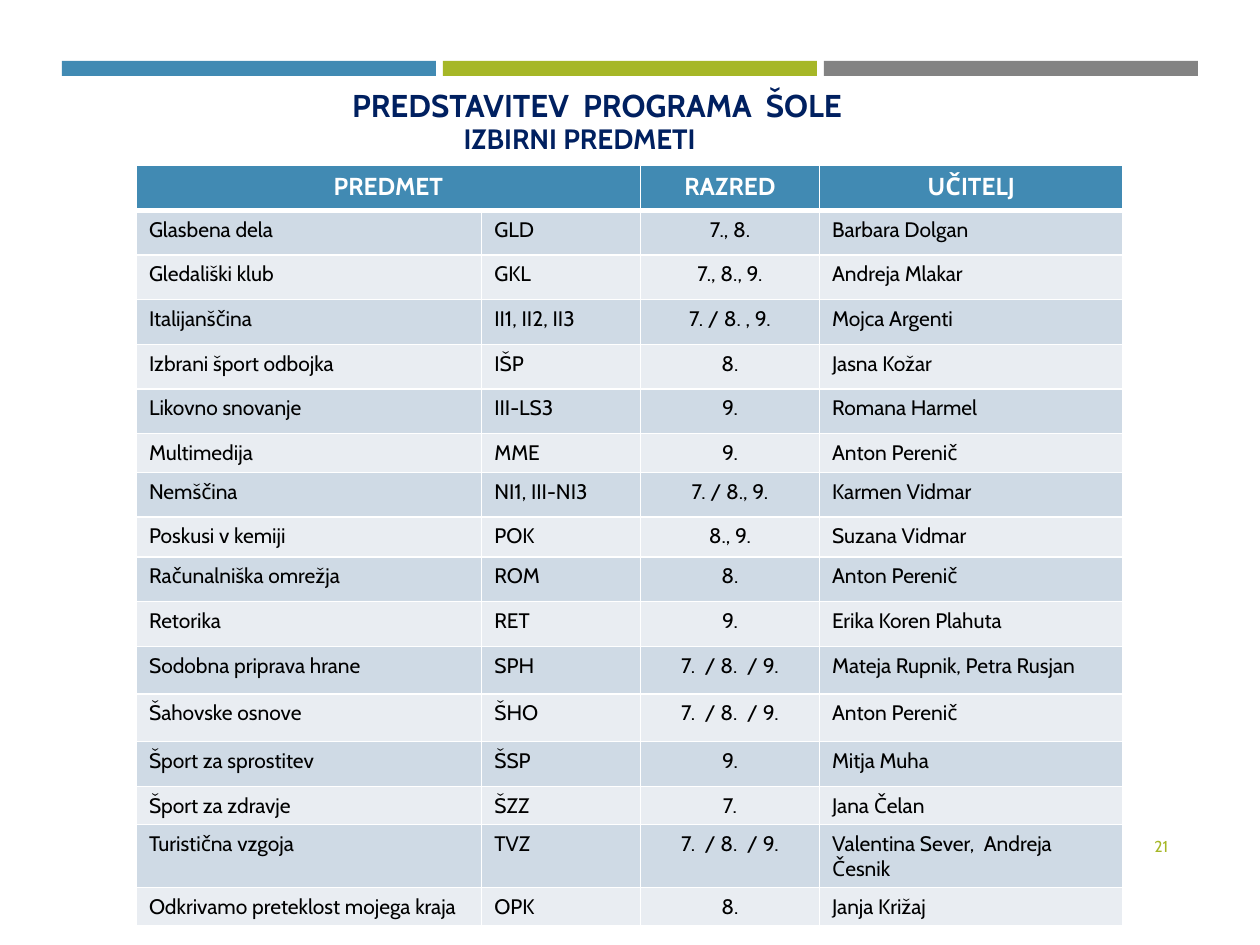
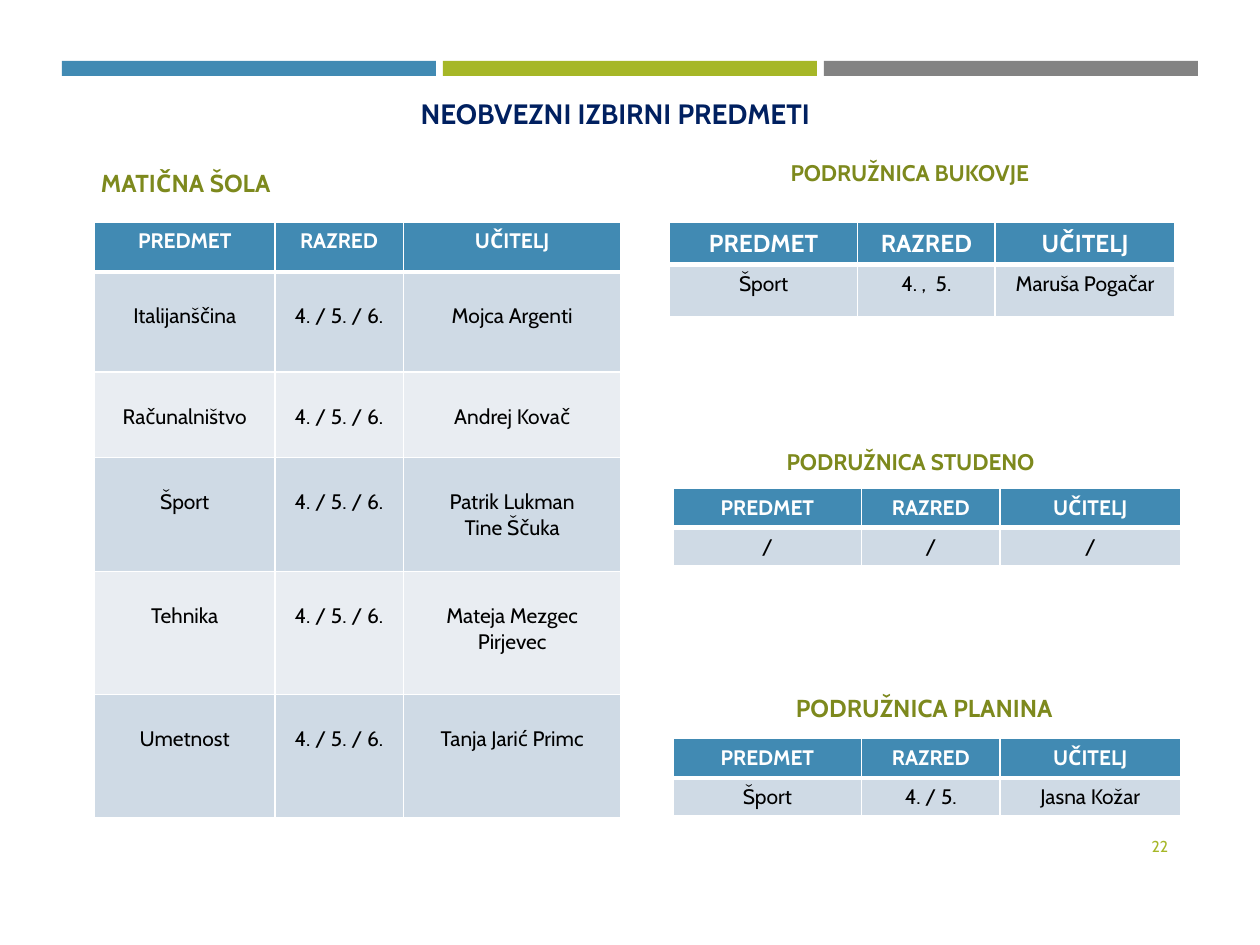
from lxml.etree import SubElement
from pptx import Presentation
from pptx.dml.color import RGBColor
from pptx.enum.shapes import MSO_SHAPE
from pptx.enum.text import MSO_ANCHOR, MSO_AUTO_SIZE, PP_ALIGN
from pptx.oxml.ns import qn
from pptx.util import Cm, Pt

COLORS = {
    "blue": "418AB3",
    "green": "A6B727",
    "gray": "838383",
    "navy": "002060",
    "olive": "7D891D",
    "odd_row": "CFDAE5",
    "even_row": "E9EDF2",
    "white": "FFFFFF",
    "black": "000000",
}
FONT = "Cabin"
LEFT, CENTER, RIGHT = PP_ALIGN.LEFT, PP_ALIGN.CENTER, PP_ALIGN.RIGHT

ELECTIVES = [
    ("Glasbena dela", "GLD", "7., 8.", "Barbara Dolgan"),
    ("Gledališki klub", "GKL", "7., 8., 9.", "Andreja Mlakar"),
    ("Italijanščina", "II1, II2, II3", "7. / 8. , 9.", "Mojca Argenti"),
    ("Izbrani šport odbojka", "IŠP", "8.", "Jasna Kožar"),
    ("Likovno snovanje", "III-LS3", "9.", "Romana Harmel"),
    ("Multimedija", "MME", "9.", "Anton Perenič"),
    ("Nemščina", "NI1, III-NI3", "7. / 8., 9.", "Karmen Vidmar"),
    ("Poskusi v kemiji", "POK", "8., 9.", "Suzana Vidmar"),
    ("Računalniška omrežja", "ROM", "8.", "Anton Perenič"),
    ("Retorika", "RET", "9.", "Erika Koren Plahuta"),
    ("Sodobna priprava hrane", "SPH", "7.  / 8.  / 9.", "Mateja Rupnik, Petra Rusjan"),
    ("Šahovske osnove", "ŠHO", "7.  / 8.  / 9.", "Anton Perenič"),
    ("Šport za sprostitev", "ŠSP", "9.", "Mitja Muha"),
    ("Šport za zdravje", "ŠZZ", "7.", "Jana Čelan"),
    ("Turistična vzgoja", "TVZ", "7.  / 8.  / 9.", "Valentina Sever,  Andreja Česnik"),
    ("Odkrivamo preteklost mojega kraja", "OPK", "8.", "Janja Križaj"),
]
ELECTIVE_HEIGHTS = [0.9] * 6 + [0.78, 0.9, 0.81, 0.9, 0.9, 0.96, 0.96, 0.9] + [0.77] * 3

GRADES = "4. / 5. / 6."
MAIN_SCHOOL = [
    ("Italijanščina", GRADES, "Mojca Argenti"),
    ("Računalništvo", GRADES, "Andrej Kovač"),
    ("Šport", GRADES, "Patrik Lukman\nTine Ščuka"),
    ("Tehnika", GRADES, "Mateja Mezgec Pirjevec"),
    ("Umetnost", GRADES, "Tanja Jarić Primc"),
]
HEADER = ("PREDMET", "RAZRED", "UČITELJ")


def rgb(color):
    return RGBColor.from_string(COLORS[color])


def write(frame, text, *, size=12, color="black", bold=False, align=CENTER, spacing=None):
    for index, line in enumerate(text.split("\n")):
        para = frame.add_paragraph() if index else frame.paragraphs[0]
        para.alignment = align
        if spacing:
            para.line_spacing = spacing
        span = para.add_run()
        span.text = line
        span.font.name = FONT
        span.font.size = Pt(size)
        span.font.bold = bold
        span.font.color.rgb = rgb(color)


class SchoolDeck:
    def __init__(self):
        self.deck = Presentation()
        self.deck.slide_width = Cm(25.4)
        self.deck.slide_height = Cm(19.05)
        self.page = None

    def add_page(self, number, title, left, top, size):
        self.page = self.deck.slides.add_slide(self.deck.slide_layouts[5])
        self.bands()
        self.title(title, left, top, size)
        box = self.text_box(21.67, 16.54, 2.13, 1.02)
        box.text_frame.vertical_anchor = MSO_ANCHOR.MIDDLE
        write(box.text_frame, str(number), size=9, color="green", align=RIGHT)

    def bands(self):
        for index, color in enumerate(("blue", "green", "gray")):
            band = self.page.shapes.add_shape(
                MSO_SHAPE.RECTANGLE, Cm(1.25 + 7.68 * index), Cm(1.23), Cm(7.54), Cm(0.3))
            band.shadow.inherit = False
            band.fill.solid()
            band.fill.fore_color.rgb = rgb(color)
            band.line.fill.background()

    def title(self, text, left, top, size):
        title = self.page.shapes.title
        title.left, title.top = Cm(left), Cm(top)
        title.width, title.height = Cm(21.89), Cm(1.12)
        frame = title.text_frame
        frame.auto_size = MSO_AUTO_SIZE.NONE
        frame.vertical_anchor = MSO_ANCHOR.TOP
        write(frame, text, size=size, color="navy", bold=True, spacing=0.9)

    def text_box(self, left, top, width, height):
        box = self.page.shapes.add_textbox(Cm(left), Cm(top), Cm(width), Cm(height))
        box.text_frame.word_wrap = True
        return box

    def heading(self, text, left, top, width, *, size=14, color="olive", spacing=0.9):
        box = self.text_box(left, top, width, 1.12)
        write(box.text_frame, text, size=size, color=color, bold=True, spacing=spacing)

    def borders(self, cell, row):
        properties = cell._tc.get_or_add_tcPr()
        widths = {"L": 1, "R": 1, "T": 3 if row == 1 else 1, "B": 3 if row == 0 else 1}
        for side, width in widths.items():
            line = SubElement(properties, qn(f"a:ln{side}"), w=str(Pt(width)))
            fill = SubElement(line, qn("a:solidFill"))
            SubElement(fill, qn("a:srgbClr"), val=COLORS["white"])

    def table(self, rows, left, top, widths, heights, *, header_size=12, aligns=None, body_top=0.13):
        table = self.page.shapes.add_table(
            len(rows), len(widths), Cm(left), Cm(top), Cm(sum(widths)), Cm(sum(heights))).table
        table.horz_banding = False
        for column, width in zip(table.columns, widths):
            column.width = Cm(width)
        for row, (values, height) in enumerate(zip(rows, heights)):
            table.rows[row].height = Cm(height)
            for column, text in enumerate(values):
                cell = table.cell(row, column)
                self.borders(cell, row)
                cell.fill.solid()
                if row == 0:
                    cell.fill.fore_color.rgb = rgb("blue")
                    if text:
                        write(cell.text_frame, text, size=header_size, color="white", bold=True)
                else:
                    cell.fill.fore_color.rgb = rgb("odd_row" if row % 2 else "even_row")
                    cell.margin_top = Cm(body_top)
                    write(cell.text_frame, text, align=aligns[column] if aligns else CENTER)
        return table


def add_electives(school):
    school.add_page(21, "PREDSTAVITEV  PROGRAMA  ŠOLE", 1.09, 1.7, 18)
    school.heading("IZBIRNI PREDMETI", 0.74, 2.41, 21.89, size=16, color="navy")
    header = ("PREDMET", "", "RAZRED", "UČITELJ")
    table = school.table(
        [header] + ELECTIVES, 2.75, 3.34, (6.96, 3.2, 3.61, 6.12), ELECTIVE_HEIGHTS,
        header_size=14, aligns=(LEFT, LEFT, CENTER, LEFT))
    table.cell(0, 0).merge(table.cell(0, 1))


def add_optional_electives(school):
    school.add_page(22, "NEOBVEZNI IZBIRNI PREDMETI", 1.46, 1.9, 16)
    school.heading("MATIČNA ŠOLA", 1.09, 3.33, 5.31)
    school.table(
        [HEADER] + MAIN_SCHOOL, 1.91, 4.48, (3.63, 2.59, 4.39),
        (1, 2.02, 1.72, 2.3, 2.48, 2.48), body_top=0.64)

    school.heading("PODRUŽNICA BUKOVJE", 15.42, 3.23, 5.84, size=12.9, spacing=0.7)
    school.table(
        [HEADER, ("Šport", "4. ,  5.", "Maruša Pogačar")],
        13.5, 4.48, (3.79, 2.77, 3.63), (0.69, 1.05), header_size=14)

    branches = [
        ("PODRUŽNICA STUDENO", 14.9, 8.97, 12.9, 9.85, ("/", "/", "/")),
        ("PODRUŽNICA PLANINA", 15.18, 13.92, 14, 14.89, ("Šport", "4. / 5.", "Jasna Kožar")),
    ]
    for name, left, top, size, table_top, values in branches:
        school.heading(name, left, top, 6.91, size=size)
        school.table([HEADER, values], 13.57, table_top, (3.8, 2.79, 3.64), (0.79, 0.77))


def main():
    school = SchoolDeck()
    add_electives(school)
    add_optional_electives(school)
    school.deck.save("out.pptx")


if __name__ == "__main__":
    main()
